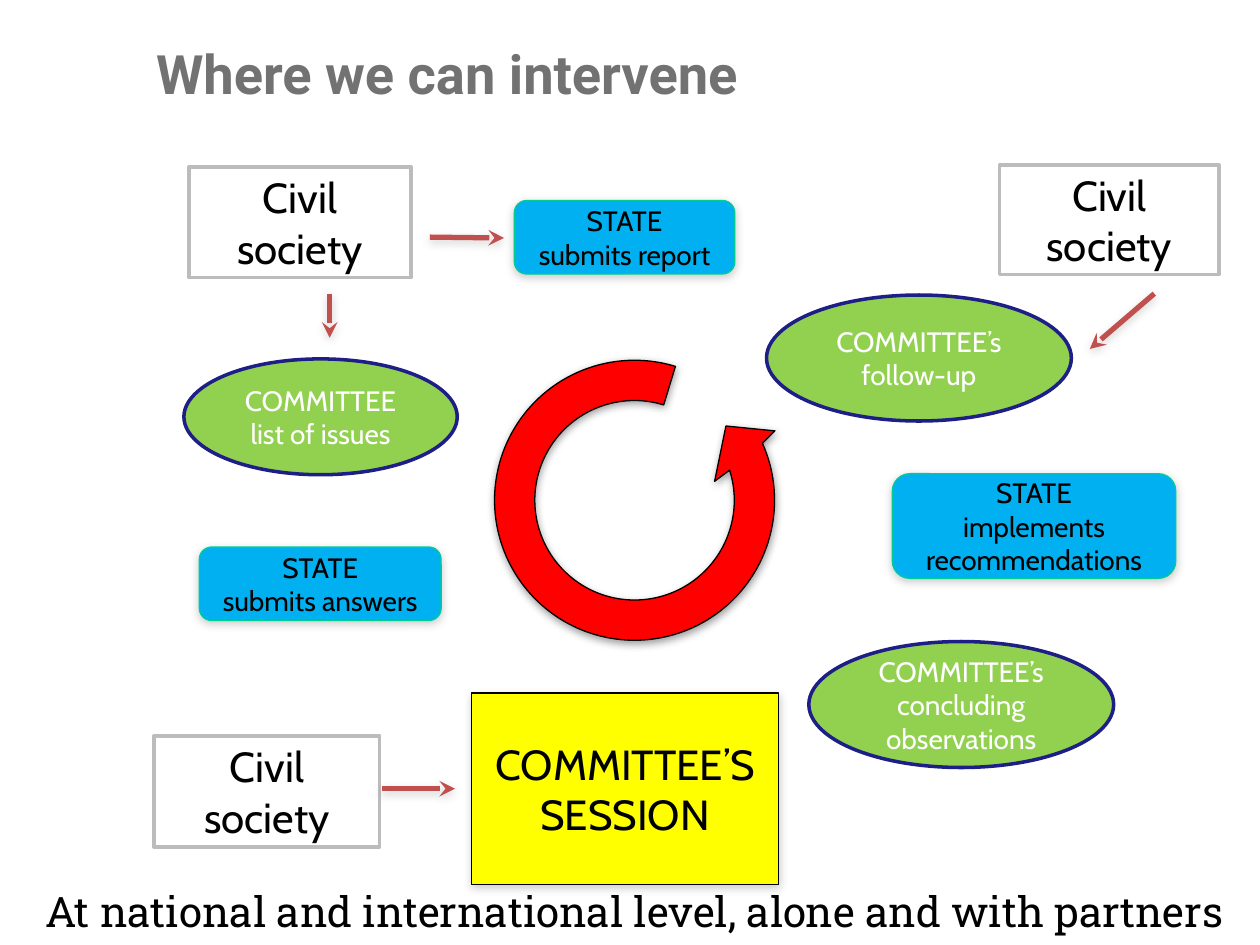
import math

import pptx
import pptx.dml.color
import pptx.enum.shapes
import pptx.enum.text
import pptx.oxml
import pptx.oxml.ns
import pptx.util

Pt = pptx.util.Pt
RGBColor = pptx.dml.color.RGBColor
SHAPES = pptx.enum.shapes.MSO_SHAPE
ALIGN = pptx.enum.text.PP_ALIGN
ANCHOR = pptx.enum.text.MSO_ANCHOR
NAMESPACE = pptx.oxml.ns.nsdecls("a")

BLACK = RGBColor(0x00, 0x00, 0x00)
WHITE = RGBColor(0xFF, 0xFF, 0xFF)
TITLE_GRAY = RGBColor(0x72, 0x72, 0x72)
BORDER_GRAY = RGBColor(0xBC, 0xBC, 0xBC)
SHADOW_GRAY = RGBColor(0x80, 0x80, 0x80)
STATE_BLUE = RGBColor(0x00, 0xB0, 0xF0)
STATE_EDGE = RGBColor(0x00, 0xCC, 0x98)
COMMITTEE_GREEN = RGBColor(0x92, 0xD0, 0x50)
COMMITTEE_EDGE = RGBColor(0x1E, 0x1E, 0x87)
SESSION_YELLOW = RGBColor(0xFF, 0xFF, 0x00)
CYCLE_RED = RGBColor(0xFF, 0x00, 0x00)
ARROW_RED = RGBColor(0xC0, 0x50, 0x4D)


def add_shadow(part, color, alpha=38, distance=1.6):
    properties = part._element.spPr
    effects = properties.find(pptx.oxml.ns.qn("a:effectLst"))
    if effects is not None:
        properties.remove(effects)
    properties.append(pptx.oxml.parse_xml(
        f'<a:effectLst {NAMESPACE}>'
        f'<a:outerShdw blurRad="{Pt(5)}" dist="{Pt(distance)}" dir="5400000" rotWithShape="0">'
        f'<a:srgbClr val="{color}"><a:alpha val="{alpha * 1000}"/></a:srgbClr>'
        '</a:outerShdw></a:effectLst>'))


def write_text(part, text, font_name, size, color, align=ALIGN.CENTER, anchor=ANCHOR.MIDDLE, bold=False):
    frame = part.text_frame
    frame.word_wrap = True
    frame.vertical_anchor = anchor
    frame.text = text
    for paragraph in frame.paragraphs:
        paragraph.alignment = align
        font = paragraph.font
        font.name, font.size, font.bold = font_name, Pt(size), bold
        font.color.rgb = color


def paint(part, fill, edge, edge_width, shadow=None):
    part.shadow.inherit = False
    part.fill.solid()
    part.fill.fore_color.rgb = fill
    part.line.color.rgb = edge
    part.line.width = Pt(edge_width)
    if shadow is not None:
        add_shadow(part, shadow)


def add_label(slide, box, text, font_name, size, color, **style):
    label = slide.shapes.add_textbox(*map(Pt, box))
    write_text(label, text, font_name, size, color, **style)


def add_actor(slide, box, outline, text, fill, edge, edge_width, size, color, shadow=None):
    actor = slide.shapes.add_shape(outline, *map(Pt, box))
    paint(actor, fill, edge, edge_width, shadow)
    write_text(actor, text, "Cabin", size, color)


def add_state(slide, box, action):
    add_actor(slide, box, SHAPES.ROUNDED_RECTANGLE, f"STATE\n{action}",
              STATE_BLUE, STATE_EDGE, 0.75, 16, BLACK, SHADOW_GRAY)


def add_committee(slide, box, text):
    add_actor(slide, box, SHAPES.OVAL, text, COMMITTEE_GREEN, COMMITTEE_EDGE, 2, 16, WHITE)


def add_civil_society(slide, box):
    add_actor(slide, box, SHAPES.RECTANGLE, "Civil society", WHITE, BORDER_GRAY, 2, 24, BLACK)


def add_session(slide, box):
    add_actor(slide, box, SHAPES.RECTANGLE, "COMMITTEE’S SESSION",
              SESSION_YELLOW, BLACK, 0.75, 24, BLACK, SHADOW_GRAY)


def add_intervention(slide, ends):
    arrow = slide.shapes.add_connector(pptx.enum.shapes.MSO_CONNECTOR.STRAIGHT, *map(Pt, ends))
    arrow.line.color.rgb = ARROW_RED
    arrow.line.width = Pt(3)
    arrow.line._get_or_add_ln().append(pptx.oxml.parse_xml(f'<a:tailEnd {NAMESPACE} type="stealth"/>'))
    add_shadow(arrow, SHADOW_GRAY, 35, 1.8)


def add_cycle(slide, box, rotation):
    left, top, width, height = map(Pt, box)
    builder = slide.shapes.build_freeform(left, top)
    builder.add_line_segments(
        [(left + width, top), (left + width, top + height), (left, top + height)], close=True)
    cycle = builder.convert_to_shape()
    outline = cycle._element.spPr.find(".//" + pptx.oxml.ns.qn("a:path"))
    for step in list(outline):
        outline.remove(step)

    def polar(radius, degrees):
        angle = math.radians(degrees)
        return (width / 2 + Pt(radius * math.cos(angle)),
                height / 2 + Pt(radius * math.sin(angle)))

    def draw(command, *points):
        marks = "".join(f'<a:pt x="{round(x)}" y="{round(y)}"/>' for x, y in points)
        outline.append(pptx.oxml.parse_xml(f'<a:{command} {NAMESPACE}>{marks}</a:{command}>'))

    def draw_arc(radius, start, end, parts=4):
        sweep = (end - start) / parts
        reach = 4 / 3 * math.tan(math.radians(sweep) / 4)
        handle_radius = radius * math.hypot(1, reach)
        lean = math.degrees(math.atan(reach))
        for part in range(parts):
            begin = start + part * sweep
            draw("cubicBezTo", polar(handle_radius, begin + lean),
                 polar(handle_radius, begin + sweep - lean), polar(radius, begin + sweep))

    draw("moveTo", polar(80, 148))
    draw_arc(80, 148, -163)
    for radius, degrees in ((89.5, -165.3), (67.3, -178.1), (47, -152.3), (57, -156.6)):
        draw("lnTo", polar(radius, degrees))
    draw_arc(57, -156.6, 148)
    draw("lnTo", polar(80, 148))
    draw("close")
    cycle.rotation = rotation
    paint(cycle, CYCLE_RED, BLACK, 0.75, BLACK)


def main():
    deck = pptx.Presentation()
    deck.slide_width, deck.slide_height = Pt(720), Pt(540)
    slide = deck.slides.add_slide(deck.slide_layouts[6])

    add_label(slide, (82.1, 3.6, 476, 75.6), "Where we can intervene", "Roboto", 31, TITLE_GRAY,
              align=ALIGN.LEFT, bold=True)

    for box, action in (((293.9, 114.6, 126, 42), "submits report"),
                        ((113.9, 312.6, 138.2, 42), "submits answers"),
                        ((509.9, 270.7, 162, 59.8), "implements recommendations")):
        add_state(slide, box, action)

    for box, text in (((105.1, 205.1, 156.2, 66.2), "COMMITTEE\nlist of issues"),
                      ((462.2, 366.6, 174.2, 72), "COMMITTEE’s\nconcluding observations"),
                      ((438, 168.6, 174.2, 72), "COMMITTEE’s\nfollow-up")):
        add_committee(slide, box, text)

    for box in ((88, 420.5, 129, 63.4), (571.2, 94.4, 125.4, 62.6), (108.1, 95.3, 126.7, 63.4)):
        add_civil_society(slide, box)

    add_session(slide, (269.5, 396, 175.5, 109.4))
    add_cycle(slide, (272.9, 193.7, 179.3, 184.3), 139)

    for ends in ((218.2, 450.7, 260, 450.7), (659.6, 167.8, 622.8, 199.4),
                 (245.6, 135.5, 288, 136), (188.4, 167.8, 188.4, 193)):
        add_intervention(slide, ends)

    add_label(slide, (2.3, 502.6, 720.7, 36.7),
              "At national and international level, alone and with partners",
              "Roboto Slab", 24, BLACK, anchor=ANCHOR.TOP)

    deck.save("out.pptx")


if __name__ == "__main__":
    main()
